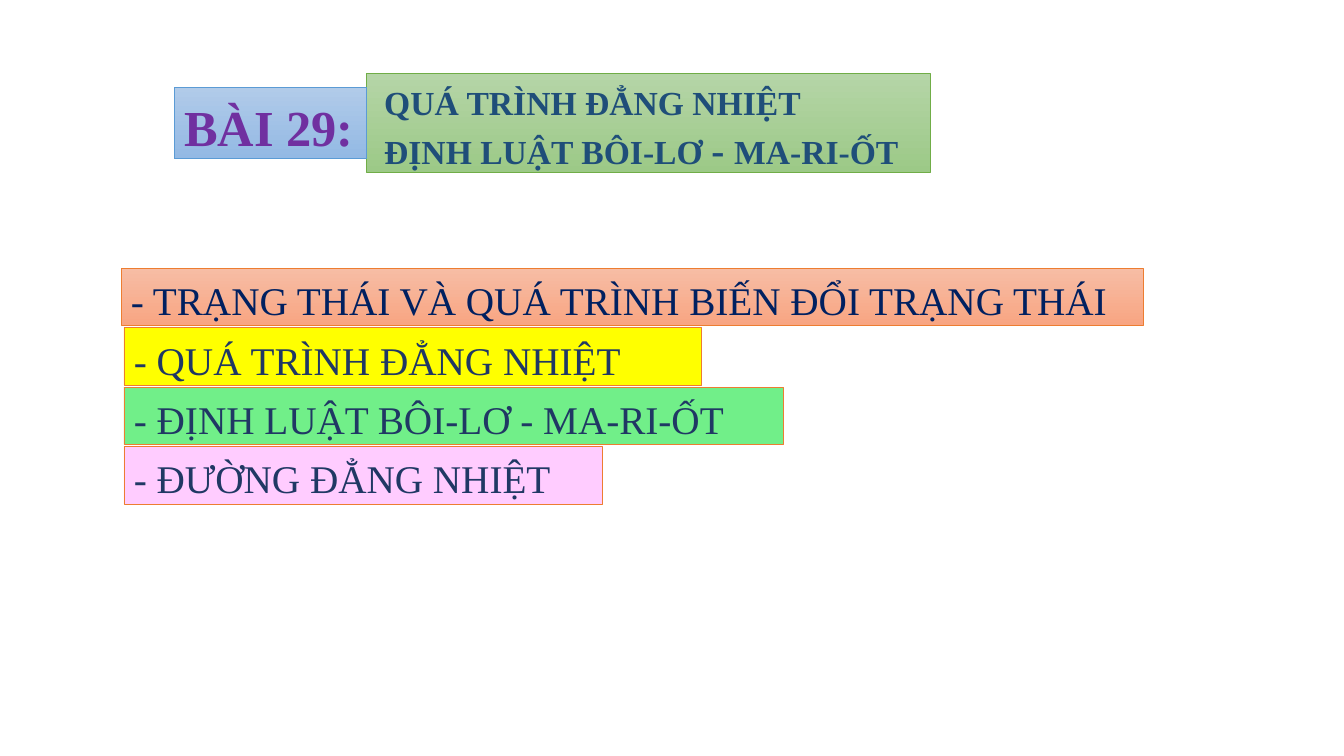
from dataclasses import dataclass

from pptx import Presentation
from pptx.dml.color import RGBColor
from pptx.enum import shapes, text
from pptx.util import Inches, Pt


@dataclass(frozen=True)
class Theme:
    font: str = "Times New Roman"
    green: tuple = ("B5D5A7", "9CC987")
    blue: tuple = ("B1CBE9", "93B9E4")
    orange: tuple = ("F7BDA5", "F8A582")
    yellow: tuple = ("FFFF00",)
    mint: tuple = ("71EF89",)
    pink: tuple = ("FFCCFF",)
    green_line: str = "70AD47"
    blue_line: str = "5B9BD5"
    orange_line: str = "ED7D31"
    title_text: str = "1F4E79"
    lesson_text: str = "7030A0"
    first_topic_text: str = "002060"
    topic_text: str = "203864"
    title_size: int = 24
    topic_size: int = 28
    lesson_size: int = 36
    line_spacing: float = 1.07


THEME = Theme()


def place(shape, left, top, width, height):
    shape.left, shape.top = Inches(left), Inches(top)
    shape.width, shape.height = Inches(width), Inches(height)


def style_box(shape, colors, line_color):
    """Fill with one colour, or with a downward gradient between two."""
    if len(colors) == 1:
        shape.fill.solid()
        shape.fill.fore_color.rgb = RGBColor.from_string(colors[0])
    else:
        shape.fill.gradient()
        shape.fill.gradient_angle = 270
        for stop, color in zip(shape.fill.gradient_stops, colors):
            stop.color.rgb = RGBColor.from_string(color)
    shape.line.color.rgb = RGBColor.from_string(line_color)
    shape.line.width = Pt(0.5)


def write_lines(shape, lines, color, bold=False, indent=0.1):
    """Write each line as a paragraph of (wording, size) runs."""
    frame = shape.text_frame
    frame.word_wrap = True
    frame.auto_size = text.MSO_AUTO_SIZE.NONE
    frame.vertical_anchor = text.MSO_ANCHOR.TOP
    frame.margin_left = Inches(indent)
    frame.margin_right = 0
    for index, runs in enumerate(lines):
        paragraph = frame.paragraphs[0] if index == 0 else frame.add_paragraph()
        paragraph.alignment = text.PP_ALIGN.LEFT
        paragraph.line_spacing = THEME.line_spacing
        for wording, size in runs:
            run = paragraph.add_run()
            run.text = wording
            run.font.name = THEME.font
            run.font.size = Pt(size)
            run.font.bold = bold
            run.font.color.rgb = RGBColor.from_string(color)


def add_box(slide, left, top, width, height, colors, line_color):
    shape = slide.shapes.add_shape(shapes.MSO_SHAPE.RECTANGLE, 0, 0, 0, 0)
    shape.shadow.inherit = False
    place(shape, left, top, width, height)
    style_box(shape, colors, line_color)
    return shape


def add_heading(slide, left, top, width, height):
    """Lesson number on the left, joined to the taller lesson title."""
    lesson_width, lesson_height = 1.9, 0.71
    title = slide.shapes.title
    place(title, left + lesson_width, top, width - lesson_width, height)
    style_box(title, THEME.green, THEME.green_line)
    size = THEME.title_size
    write_lines(title, [
        [("QUÁ TRÌNH ĐẲNG NHIỆT", size)],
        [("ĐỊNH LUẬT BÔI-LƠ ", size), ("- ", THEME.topic_size), ("MA-RI-ỐT", size)],
    ], THEME.title_text, bold=True, indent=0.18)
    lesson = add_box(slide, left, top + (height - lesson_height) / 2,
                     lesson_width, lesson_height, THEME.blue, THEME.blue_line)
    write_lines(lesson, [[("BÀI 29:", THEME.lesson_size)]],
                THEME.lesson_text, bold=True)


def add_topics(slide, left, top):
    """Stack the topic bars, each as wide as its wording needs."""
    bar_height, pitch, inset = 0.57, 0.59, 0.03
    topics = [
        ("- TRẠNG THÁI VÀ QUÁ TRÌNH BIẾN ĐỔI TRẠNG THÁI", 10.14,
         THEME.orange, THEME.first_topic_text),
        ("- QUÁ TRÌNH ĐẲNG NHIỆT", 5.73, THEME.yellow, THEME.topic_text),
        ("- ĐỊNH LUẬT BÔI-LƠ - MA-RI-ỐT", 6.54, THEME.mint, THEME.topic_text),
        ("- ĐƯỜNG ĐẲNG NHIỆT", 4.74, THEME.pink, THEME.topic_text),
    ]
    for index, (wording, width, colors, color) in enumerate(topics):
        bar_left = left + (inset if index else 0)
        bar = add_box(slide, bar_left, top + index * pitch, width, bar_height,
                      colors, THEME.orange_line)
        write_lines(bar, [[(wording, THEME.topic_size)]], color)


def main():
    presentation = Presentation()
    presentation.slide_width = Inches(13.33)
    presentation.slide_height = Inches(7.5)
    slide = presentation.slides.add_slide(
        presentation.slide_layouts.get_by_name("Title Only"))
    add_heading(slide, 1.73, 0.73, 7.5, 0.98)
    add_topics(slide, 1.2, 2.66)
    presentation.save("out.pptx")


if __name__ == "__main__":
    main()
